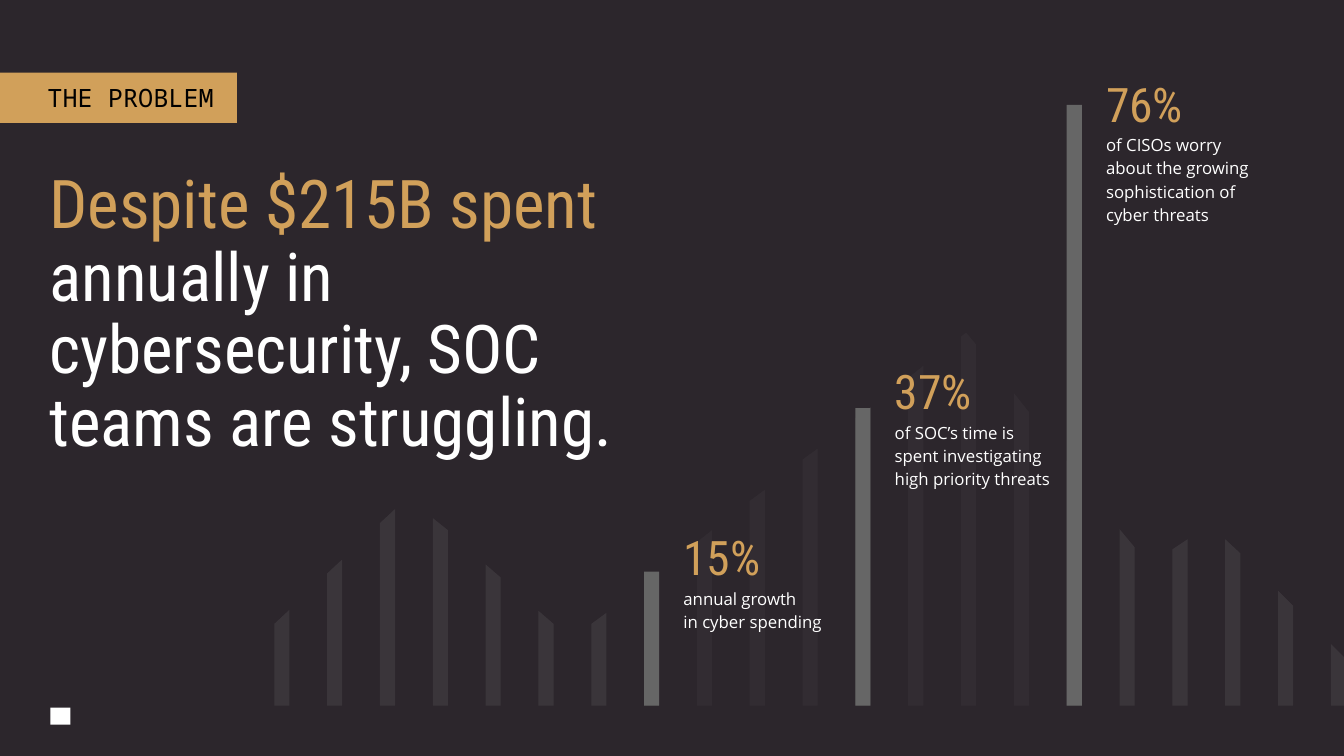
"""Build the slide on cybersecurity spending with its bar skyline."""
from copy import deepcopy

from lxml.etree import SubElement
from pptx import Presentation
from pptx.dml.color import RGBColor
from pptx.enum.shapes import MSO_SHAPE as Shape
from pptx.oxml.ns import qn
from pptx.util import Inches, Pt

COLORS = {"night": "2C262C", "gold": "D1A05A", "white": "FFFFFF",
          "black": "000000", "gray": "666666"}
CONDENSED, MONO, SANS = "Roboto Condensed", "Noto Sans Mono", "Open Sans"

LABEL = "THE PROBLEM"
TITLE = [("Despite $215B spent", "gold"),
         ("annually in cybersecurity, SOC teams are struggling.", "white")]
STATS = [
    {"column": 7, "bar_top": 5.67, "text_top": 5.24, "width": 1.42, "height": 0.43,
     "value": "15%", "caption": "annual growth\vin cyber spending"},
    {"column": 11, "bar_top": 4.05, "text_top": 3.59, "width": 1.62, "height": 0.67,
     "value": "37%", "caption": "of SOC’s time is\vspent investigating high priority threats"},
    {"column": 15, "bar_top": 1.04, "text_top": 0.74, "width": 1.62, "height": 0.9,
     "value": "76%",
     "caption": "of CISOs worry about the growing sophistication of cyber threats"},
]
SKYLINE = [
    (6.19, 6.05), (5.69, 5.55), (5.19, 5.05), (5.14, 5.26), (5.6, 5.73),
    (6.06, 6.19), (6.19, 6.08), (5.78, 5.67), (5.38, 5.26), (4.97, 4.86),
    (4.56, 4.45), (4.15, 4.04), (3.75, 3.63), (3.34, 3.42), (3.9, 4.09),
    (4.57, 4.76), (5.25, 5.43), (5.45, 5.35), (5.35, 5.49), (5.86, 6.01),
    (6.39, 6.54),
]
PEAK = {13: (0.05, 3.3)}
FAINT = {8, 9, 10, 12, 13, 14}
FIRST_X, LAST_X, BAR_WIDTH, BASE = 2.72, 13.2, 0.15, 7.0
PITCH = (LAST_X - FIRST_X) / (len(SKYLINE) - 1)


def color(name):
    return RGBColor.from_string(COLORS[name])


def paint(shape, name, opacity=100):
    shape.shadow.inherit = False
    shape.fill.solid()
    shape.fill.fore_color.rgb = color(name)
    shape.line.fill.background()
    if opacity < 100:
        tint = shape.fill._xPr.find(".//" + qn("a:srgbClr"))
        SubElement(tint, qn("a:alpha")).set("val", str(opacity * 1000))


def add_block(page, left, top, width, height, name):
    block = page.shapes.add_shape(Shape.RECTANGLE, Inches(left), Inches(top),
                                  Inches(width), Inches(height))
    paint(block, name)


def add_text(page, left, top, width, height, lines, size, font, spacing=None):
    box = page.shapes.add_textbox(Inches(left), Inches(top), Inches(width), Inches(height))
    frame = box.text_frame
    frame.word_wrap = True
    frame.margin_left = frame.margin_top = frame.margin_right = frame.margin_bottom = 0
    for index, (words, name) in enumerate(lines):
        para = frame.add_paragraph() if index else frame.paragraphs[0]
        para.text = words
        if spacing:
            para.line_spacing = spacing
        for span in para.runs:
            span.font.size = Pt(size)
            span.font.name = font
            span.font.color.rgb = color(name)
        for line_break in para._p.findall(qn("a:br")):
            line_break.append(deepcopy(para.runs[0]._r.rPr))


def add_skyline_bar(page, column):
    left = FIRST_X + column * PITCH
    right = left + BAR_WIDTH
    left_top, right_top = SKYLINE[column]
    points = [(left, left_top), (right, right_top), (right, BASE)]
    if column in PEAK:
        offset, top = PEAK[column]
        points.insert(1, (left + offset, top))
    builder = page.shapes.build_freeform(Inches(left), Inches(BASE))
    builder.add_line_segments([(Inches(x), Inches(y)) for x, y in points])
    paint(builder.convert_to_shape(), "white", 3 if column in FAINT else 7)


def main():
    deck = Presentation()
    deck.slide_width, deck.slide_height = Inches(13.33), Inches(7.5)
    page = deck.slides.add_slide(deck.slide_layouts[6])
    page.background.fill.solid()
    page.background.fill.fore_color.rgb = color("night")

    add_block(page, 0.5, 7.02, 0.2, 0.17, "white")
    add_text(page, 0.49, 1.69, 6.31, 2.18, TITLE, 48, CONDENSED, 0.9)
    for column in range(len(SKYLINE)):
        add_skyline_bar(page, column)
    add_block(page, -0.01, 0.72, 2.36, 0.5, "gold")
    add_text(page, 0.47, 0.82, 1.82, 0.3, [(LABEL, "black")], 18, MONO)

    for stat in STATS:
        bar_left = FIRST_X + stat["column"] * PITCH
        text_left, top = bar_left + 0.39, stat["text_top"]
        add_block(page, bar_left, stat["bar_top"], BAR_WIDTH, BASE - stat["bar_top"], "gray")
        add_text(page, text_left, top, 1.71, 0.57, [(stat["value"], "gold")], 34, CONDENSED)
        add_text(page, text_left, top + 0.57, stat["width"], stat["height"],
                 [(stat["caption"], "white")], 12, SANS, 1.15)

    deck.save("out.pptx")


if __name__ == "__main__":
    main()
